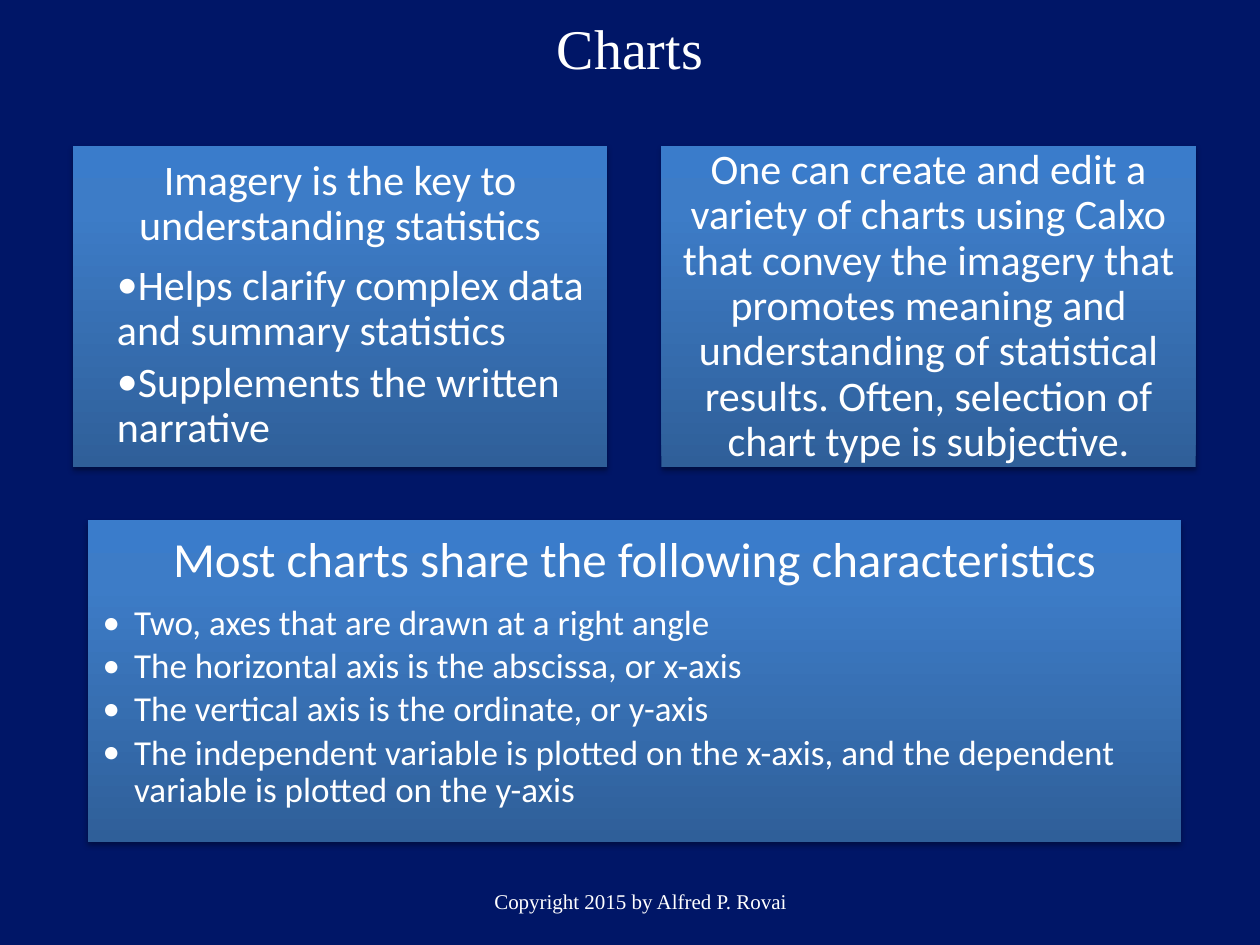
from lxml.etree import SubElement
from pptx import Presentation
from pptx.dml.color import RGBColor
from pptx.enum.shapes import MSO_SHAPE
from pptx.enum.text import MSO_ANCHOR, PP_ALIGN
from pptx.oxml import parse_xml
from pptx.oxml.ns import qn
from pptx.util import Emu, Inches, Pt

COLORS = {
    "background": "001667",
    "text": "FFFFFF",
    "panel_bottom": "2F5F99",
    "panel_middle": "3D7CC7",
    "panel_top": "3A7CCB",
    "shadow": "000000",
}
SERIF, SANS = "Times New Roman", "Calibri"
DRAWING_NS = "http://schemas.openxmlformats.org/drawingml/2006/main"

# Panel grid: two columns above one wide, centred panel
LEFT, TOP, COLUMN_GAP, ROW_GAP = 0.58, 1.16, 0.43, 0.42
COLUMN_WIDTH, ROW_HEIGHT = 4.24, 2.55
GRID_WIDTH = 2 * COLUMN_WIDTH + COLUMN_GAP
WIDE_WIDTH = 8.68


def write(paragraph, text, size=24, font=SANS, align=PP_ALIGN.CENTER,
          line_spacing=None, space_after=0):
    """Put formatted text in a paragraph; space_after is a share of the size."""
    paragraph.alignment = align
    if line_spacing:
        paragraph.line_spacing = line_spacing
    paragraph.space_before = Pt(0)
    paragraph.space_after = Pt(round(size * space_after, 1))
    run = paragraph.add_run()
    run.text = text
    run.font.size = Pt(size)
    run.font.name = font
    run.font.color.rgb = RGBColor.from_string(COLORS["text"])


def add_bullet(paragraph, hanging):
    paragraph.level = 1
    properties = paragraph._p.get_or_add_pPr()
    properties.set("marL", str(Inches(0.25)))
    properties.set("indent", str(-Inches(hanging)))
    SubElement(properties, qn("a:buFont")).set("typeface", SANS)
    SubElement(properties, qn("a:buChar")).set("char", "•")


def add_gradient(panel):
    stops = "".join(
        f'<a:gs pos="{share * 1000}"><a:srgbClr val="{COLORS[name]}"/></a:gs>'
        for share, name in ((0, "panel_bottom"), (80, "panel_middle"), (100, "panel_top")))
    gradient = parse_xml(
        f'<a:gradFill xmlns:a="{DRAWING_NS}" rotWithShape="1"><a:gsLst>{stops}</a:gsLst>'
        '<a:lin ang="16200000" scaled="0"/></a:gradFill>')
    panel._element.spPr.find(qn("a:prstGeom")).addnext(gradient)


def add_shadow(panel):
    panel.shadow.inherit = False
    effects = panel._element.spPr.find(qn("a:effectLst"))
    effects.append(parse_xml(
        f'<a:outerShdw xmlns:a="{DRAWING_NS}" blurRad="{Pt(3.1)}" dist="{Pt(1.8)}" '
        f'dir="5400000" rotWithShape="0"><a:srgbClr val="{COLORS["shadow"]}">'
        '<a:alpha val="35000"/></a:srgbClr></a:outerShdw>'))


def add_panel(slide, left, row, width, heading, bullets=(), heading_size=24,
              bullet_size=24, hanging=0, inset=0.1, anchor=MSO_ANCHOR.TOP):
    top = TOP + row * (ROW_HEIGHT + ROW_GAP)
    panel = slide.shapes.add_shape(MSO_SHAPE.RECTANGLE, Inches(left), Inches(top),
                                   Inches(width), Inches(ROW_HEIGHT))
    panel.line.fill.background()
    add_gradient(panel)
    add_shadow(panel)

    frame = panel.text_frame
    frame.word_wrap = True
    frame.vertical_anchor = anchor
    frame.margin_left = frame.margin_right = Inches(inset)
    frame.margin_top = frame.margin_bottom = Inches(inset)
    write(frame.paragraphs[0], heading, size=heading_size, line_spacing=0.9, space_after=0.35)
    for bullet in bullets:
        paragraph = frame.add_paragraph()
        write(paragraph, bullet, size=bullet_size, align=PP_ALIGN.LEFT,
              line_spacing=0.9, space_after=0.15)
        add_bullet(paragraph, hanging)


def add_title(slide, text):
    title = slide.shapes.title
    title.left, title.top, title.width, title.height = Inches(0.5), Emu(0), Inches(9), Inches(0.75)
    title.text_frame.vertical_anchor = MSO_ANCHOR.MIDDLE
    write(title.text_frame.paragraphs[0], text, size=32, font=SERIF)


def add_copyright(slide, text):
    notice = slide.shapes.add_textbox(Inches(1.75), Inches(6.95), Inches(6.67), Inches(0.4))
    notice.text_frame.word_wrap = True
    notice.text_frame.vertical_anchor = MSO_ANCHOR.MIDDLE
    write(notice.text_frame.paragraphs[0], text, size=12, font=SERIF)


def main():
    deck = Presentation()
    deck.slide_width, deck.slide_height = Inches(10), Inches(7.5)
    slide = deck.slides.add_slide(deck.slide_layouts[5])
    slide.background.fill.solid()
    slide.background.fill.fore_color.rgb = RGBColor.from_string(COLORS["background"])

    add_title(slide, "Charts")
    add_copyright(slide, "Copyright 2015 by Alfred P. Rovai")

    # Upper row: why charts matter
    add_panel(slide, LEFT, 0, COLUMN_WIDTH,
              "Imagery is the key to understanding statistics",
              ["Helps clarify complex data and summary statistics",
               "Supplements the written narrative"])
    add_panel(slide, LEFT + COLUMN_WIDTH + COLUMN_GAP, 0, COLUMN_WIDTH,
              "One can create and edit a variety of charts using Calxo that convey "
              "the imagery that promotes meaning and understanding of statistical "
              "results. Often, selection of chart type is subjective.",
              anchor=MSO_ANCHOR.MIDDLE)

    # Lower row: shared characteristics
    add_panel(slide, LEFT + (GRID_WIDTH - WIDE_WIDTH) / 2, 1, WIDE_WIDTH,
              "Most charts share the following characteristics",
              ["Two, axes that are drawn at a right angle",
               "The horizontal axis is the abscissa, or x-axis",
               "The vertical axis is the ordinate, or y-axis",
               "The independent variable is plotted on the x-axis, and the "
               "dependent variable is plotted on the y-axis"],
              heading_size=28, bullet_size=20, hanging=0.25, inset=0.12)

    deck.save("out.pptx")


if __name__ == "__main__":
    main()
